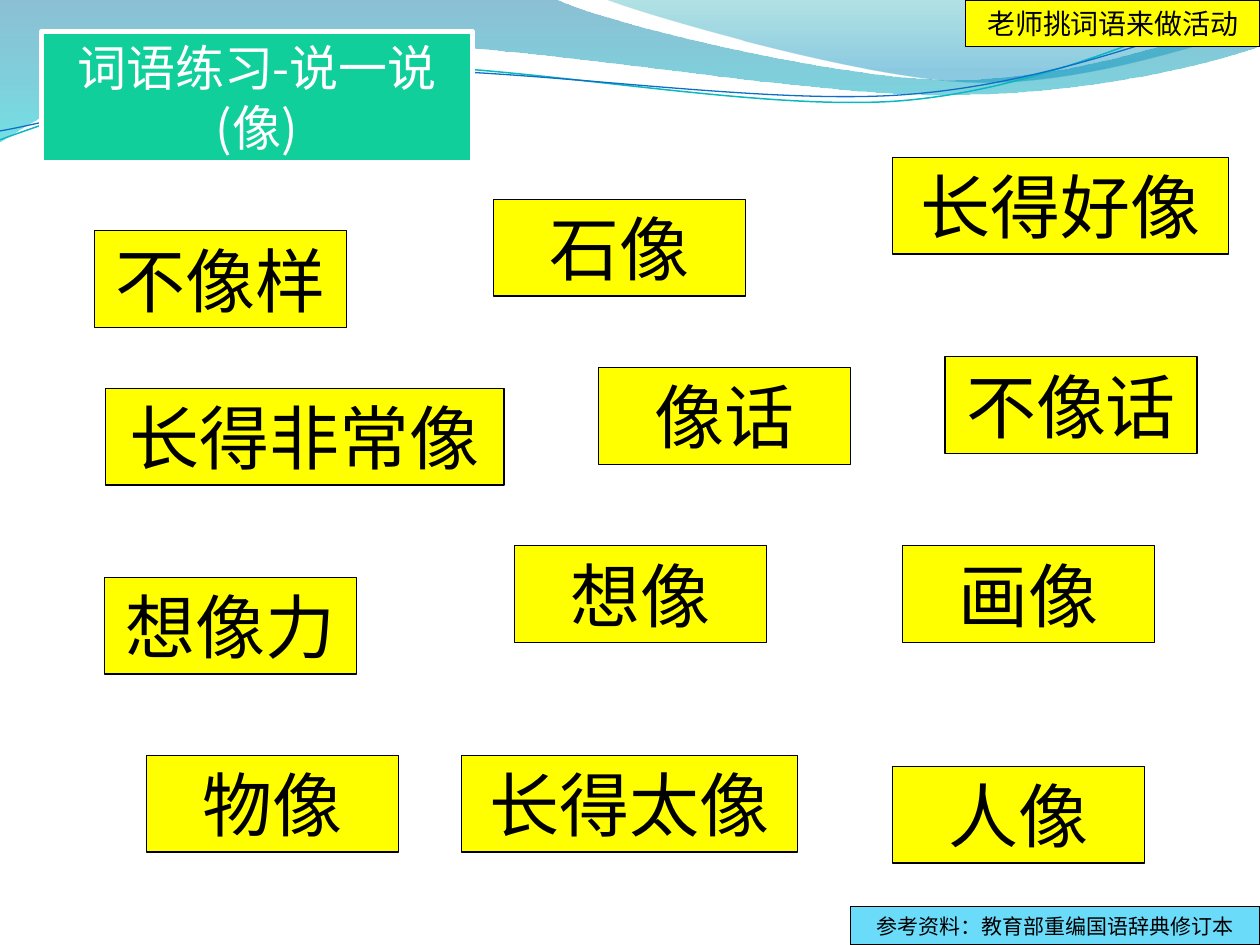
"""Build a vocabulary practice slide with word cards on a wave background."""
from typing import NamedTuple

from lxml import etree
from pptx import Presentation
from pptx.dml.color import RGBColor
from pptx.enum.shapes import MSO_SHAPE
from pptx.enum.text import MSO_ANCHOR, MSO_AUTO_SIZE, PP_ALIGN
from pptx.oxml.ns import qn
from pptx.util import Cm, Pt

RECT = MSO_SHAPE.RECTANGLE
CENTER = PP_ALIGN.CENTER
MIDDLE = MSO_ANCHOR.MIDDLE
NO_FIT = MSO_AUTO_SIZE.NONE

FONT = "Noto Sans CJK SC"
BLACK = RGBColor(0x00, 0x00, 0x00)
WHITE = RGBColor(0xFF, 0xFF, 0xFF)
YELLOW = RGBColor(0xFF, 0xFF, 0x00)
GREEN = RGBColor(0x10, 0xCF, 0x9B)
SKY = RGBColor(0x6B, 0xDB, 0xFA)
DEEP_BLUE = RGBColor(0x00, 0x74, 0xA1)
AQUA = RGBColor(0x00, 0xC6, 0xCF)
TEAL = RGBColor(0x00, 0xA1, 0xA9)
OCEAN = RGBColor(0x00, 0x8B, 0xBF)
LINE_TEAL = RGBColor(0x0A, 0xB8, 0xBF)
LINE_BLUE = RGBColor(0x0F, 0x6F, 0xC6)

CARD_H = 1.95
RIPPLE_TILT = 357.3
Point = tuple[float, float]
Segments = list[tuple[Point, ...]]


class Card(NamedTuple):
    text: str
    left: float
    top: float
    width: float = 5.08
    height: float = CARD_H
    size: int = 40
    fill: RGBColor = YELLOW


class Stop(NamedTuple):
    position: float
    color: RGBColor
    opacity: int


class Wave(NamedTuple):
    start: Point
    segments: Segments
    stops: list[Stop]


class Ripple(NamedTuple):
    start: Point
    segments: Segments
    color: RGBColor
    weight: float


WAVES = [
    Wave((0, 0), [
        ((11.18, -0.03),),
        ((12.09, 0.43), (16.87, 1.6), (19.25, 1.6)),
        ((21.67, 1.6), (24.33, 0.66), (25.4, 0.23)),
        ((25.43, 0.91),),
        ((24.97, 1.12), (22.1, 1.93), (18.95, 1.91)),
        ((15.8, 1.91), (9.7, 0.71), (6.53, 0.86)),
        ((3.28, 0.91), (1.17, 2.11), (-0.03, 2.87)),
        ((0, 0),),
    ], [Stop(0, DEEP_BLUE, 45), Stop(1, AQUA, 55)]),
    Wave((12.17, -0.03), [
        ((12.93, 0.28), (17.32, 1.57), (19.53, 1.65)),
        ((21.74, 1.75), (24.41, 0.81), (25.4, 0.53)),
        ((25.4, 0),),
        ((12.17, -0.03),),
    ], [Stop(0, TEAL, 30), Stop(0.8, OCEAN, 45)]),
]

RIPPLES = [
    Ripple((-0.05, 2.22), [
        ((1.19, 1.82), (4.02, 1.04), (7.05, 1.05)),
        ((10.05, 1.07), (15.02, 2.37), (18.08, 2.29)),
        ((21.13, 2.2), (23.87, 0.91), (25.41, 0.55)),
    ], LINE_TEAL, 0.85),
    Ripple((-0.04, 2.04), [
        ((1.16, 1.9), (4.18, 1.15), (7.2, 1.16)),
        ((10.25, 1.18), (15.13, 2.25), (18.18, 2.17)),
        ((21.21, 2.1), (23.93, 1.06), (25.45, 0.75)),
    ], LINE_BLUE, 0.75),
]

CARDS = [
    Card("不像话", 19.05, 7.19),
    Card("像话", 12.07, 7.41),
    Card("想像力", 2.11, 11.64),
    Card("想像", 10.37, 11),
    Card("画像", 18.2, 11),
    Card("不像样", 1.91, 4.65),
    Card("人像", 17.99, 15.45),
    Card("物像", 2.96, 15.23),
    Card("石像", 9.95, 4.02),
    Card("长得太像", 9.31, 15.23, 6.77),
    Card("长得好像", 17.99, 3.17, 6.77),
    Card("长得非常像", 2.13, 7.83, 8.03),
    Card("参考资料：教育部重编国语辞典修订本", 17.15, 18.28, 8.25, 0.77, 12, SKY),
    Card("老师挑词语来做活动", 19.47, 0, 5.93, 0.94, 16),
]


def add_outline(shapes, start: Point, segments: Segments, close: bool):
    """Add a freeform whose three-point segments are cubic curves."""
    points = [(Cm(x), Cm(y)) for seg in segments for x, y in seg]
    builder = shapes.build_freeform(Cm(start[0]), Cm(start[1]), scale=1.0)
    builder.add_line_segments(points, close=close)
    sp = builder.convert_to_shape()
    sp.shadow.inherit = False
    lines = iter(list(sp._element.iter(qn("a:lnTo"))))
    for seg in segments:
        first, *rest = [next(lines) for _ in seg]
        if rest:
            first.tag = qn("a:cubicBezTo")
            for line in rest:
                first.append(line[0])
                line.getparent().remove(line)
    return sp


def add_wave(shapes, wave: Wave) -> None:
    """Add a translucent gradient wave."""
    sp = add_outline(shapes, wave.start, wave.segments, True)
    sp.line.fill.background()
    sp.fill.gradient()
    sp.fill.gradient_angle = 270
    for gs, stop in zip(sp.fill.gradient_stops, wave.stops):
        gs.position = stop.position
        gs.color.rgb = stop.color
    colors = sp._element.spPr.iter(qn("a:srgbClr"))
    for color, stop in zip(colors, wave.stops):
        etree.SubElement(color, qn("a:alpha"), val=str(stop.opacity * 1000))


def add_ripple(shapes, ripple: Ripple) -> None:
    """Add a thin tilted curve."""
    sp = add_outline(shapes, ripple.start, ripple.segments, False)
    sp.rotation = RIPPLE_TILT
    sp.fill.background()
    sp.line.color.rgb = ripple.color
    sp.line.width = Pt(ripple.weight)


def style_box(sp, text: str, size: int, color: RGBColor, fill: RGBColor,
              line: RGBColor, weight: float) -> None:
    """Fill and outline a box and set its centred text."""
    sp.shadow.inherit = False
    sp.fill.solid()
    sp.fill.fore_color.rgb = fill
    sp.line.color.rgb = line
    sp.line.width = Pt(weight)
    tf = sp.text_frame
    tf.word_wrap = True
    tf.auto_size = NO_FIT
    tf.vertical_anchor = MIDDLE
    p = tf.paragraphs[0]
    p.alignment = CENTER
    r = p.add_run()
    r.text = text
    r.font.size = Pt(size)
    r.font.name = FONT
    r.font.color.rgb = color
    etree.SubElement(r.font._element, qn("a:ea"), typeface=FONT)


def add_card(shapes, card: Card) -> None:
    """Add a bordered text card."""
    sp = shapes.add_shape(RECT, Cm(card.left), Cm(card.top), Cm(card.width), Cm(card.height))
    style_box(sp, card.text, card.size, BLACK, card.fill, BLACK, 0.75)


def place_title(shapes) -> None:
    """Move and format the title in front of the waves."""
    sp = shapes.title
    sp.left, sp.top, sp.width, sp.height = Cm(0.84), Cm(0.63), Cm(8.68), Cm(2.64)
    style_box(sp, "词语练习-说一说(像)", 28, WHITE, GREEN, WHITE, 3)
    sp.text_frame.paragraphs[0].line_spacing = Pt(34)
    shapes._spTree.append(sp._element)


def main() -> None:
    """Create and save the slide."""
    prs = Presentation()
    prs.slide_width, prs.slide_height = Cm(25.4), Cm(19.05)
    s = prs.slides.add_slide(prs.slide_layouts[5])
    for wave in WAVES:
        add_wave(s.shapes, wave)
    group = s.shapes.add_group_shape()
    for ripple in RIPPLES:
        add_ripple(group.shapes, ripple)
    place_title(s.shapes)
    for card in CARDS:
        add_card(s.shapes, card)
    prs.save("out.pptx")


if __name__ == "__main__":
    main()
